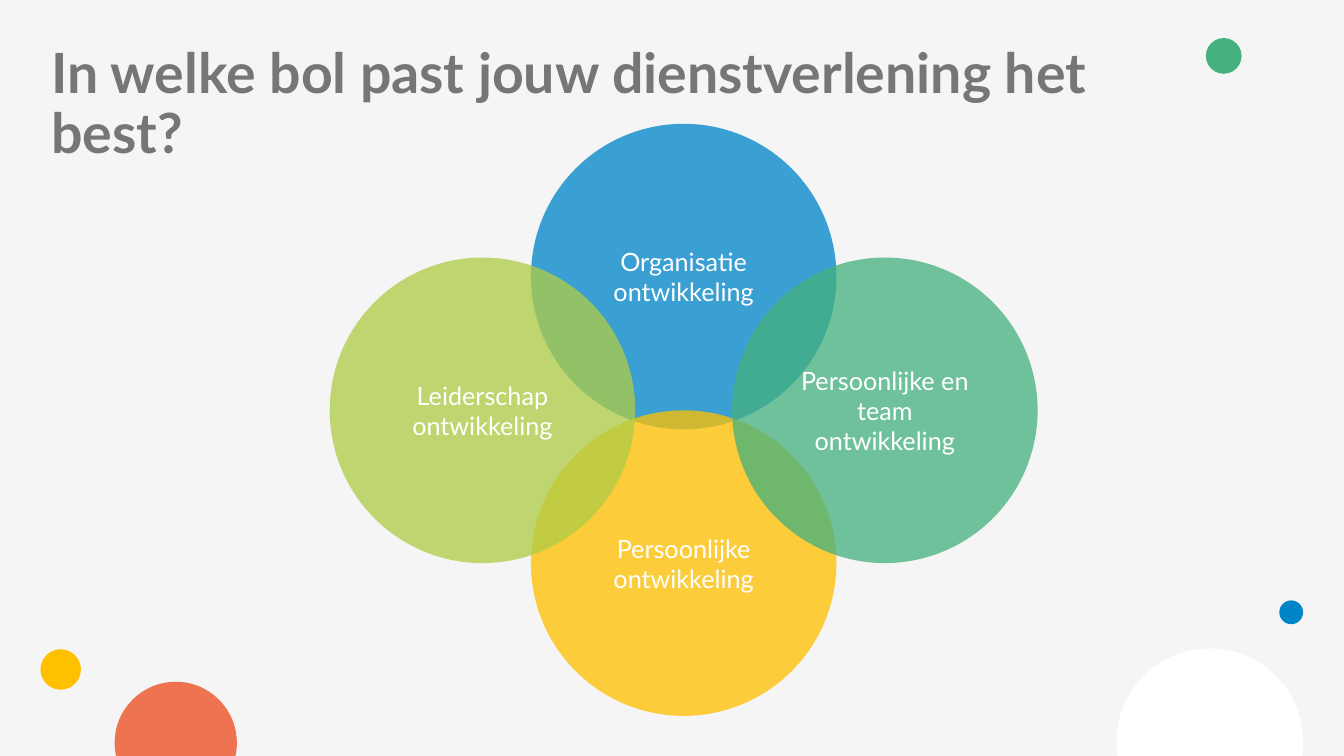
from math import asin, cos, pi, sin, tan

from lxml.etree import SubElement
from pptx import Presentation
from pptx.dml.color import RGBColor
from pptx.enum.shapes import MSO_SHAPE
from pptx.enum.text import MSO_ANCHOR, MSO_AUTO_SIZE, PP_ALIGN
from pptx.oxml.ns import qn
from pptx.util import Cm, Pt

WIDE, HIGH = 33.87, 19.05
BALL = 3.85  # radius of the labelled circles, cm
HEAD = {"name": "Lato", "size": Pt(39.6), "bold": True}
LABEL = {"name": "Lato", "size": Pt(18), "bold": False}

# centre x, centre y, radius, colour
DOTS = [
    (1.53, 16.87, 0.51, "FFC000"),
    (30.84, 1.41, 0.45, "44B17F"),
    (32.54, 15.43, 0.3, "0085C8"),
]
DOMES = [
    (30.49, 18.69, 2.35, "FFFFFF"),
    (4.43, 18.72, 1.54, "EE7351"),
]
# centre x, centre y, colour, label
BALLS = [
    (17.23, 6.97, "0085C8", "Organisatie ontwikkeling"),
    (17.23, 14.19, "FFC000", "Persoonlijke ontwikkeling"),
    (12.16, 10.34, "AFCC46", "Leiderschap ontwikkeling"),
    (22.3, 10.34, "44B17F", "Persoonlijke en team ontwikkeling"),
]


def paint(fill, tint, alpha=100):
    fill.solid()
    fill.fore_color.rgb = RGBColor.from_string(tint)
    if alpha < 100:
        color = fill._xPr.find(qn("a:solidFill"))[0]
        SubElement(color, qn("a:alpha"), val=str(alpha * 1000))


def finish(shape, tint, alpha=100):
    paint(shape.fill, tint, alpha)
    shape.line.fill.background()
    shape.shadow.inherit = False


def write(frame, text, style, tint, align, anchor):
    frame.word_wrap = True
    frame.auto_size = MSO_AUTO_SIZE.NONE
    frame.vertical_anchor = anchor
    para = frame.paragraphs[0]
    para.text = text
    para.alignment = align
    font = para.runs[0].font
    for key, value in style.items():
        setattr(font, key, value)
    font.color.rgb = RGBColor.from_string(tint)
    return para


def add_disc(slide, x, y, r, tint, alpha=100):
    disc = slide.shapes.add_shape(
        MSO_SHAPE.OVAL, Cm(x - r), Cm(y - r), Cm(2 * r), Cm(2 * r))
    finish(disc, tint, alpha)
    return disc


def bend(shape):
    """Turn each three line segments of an outline into one Bézier curve."""
    lines = list(shape._element.iter(qn("a:lnTo")))
    for i in range(0, len(lines), 3):
        curve = lines[i]
        curve.tag = qn("a:cubicBezTo")
        for line in lines[i + 1:i + 3]:
            curve.append(line[0])
            line.getparent().remove(line)


def add_dome(slide, x, y, r, tint):
    """Draw a circle that is cut off flat at the bottom edge of the slide."""
    dip = asin((HIGH - y) / r)
    turns = [dip, 0, -pi / 2, -pi, -pi - dip]

    def spot(turn, pull=0):
        return (Cm(x + r * (cos(turn) - pull * sin(turn))),
                Cm(y + r * (sin(turn) + pull * cos(turn))))

    pen = slide.shapes.build_freeform(*spot(dip))
    for start, end in zip(turns, turns[1:]):
        pull = 4 / 3 * tan((end - start) / 4)
        pen.add_line_segments(
            [spot(start, pull), spot(end, -pull), spot(end)], close=False)
    pen.add_line_segments([], close=True)
    dome = pen.convert_to_shape()
    bend(dome)
    finish(dome, tint)


def add_ball(slide, x, y, tint, text):
    ball = add_disc(slide, x, y, BALL, tint, alpha=76)
    write(ball.text_frame, text, LABEL, "FFFFFF",
          PP_ALIGN.CENTER, MSO_ANCHOR.MIDDLE)


def set_title(slide, text):
    title = slide.shapes.title
    place = {"left": Cm(1.04), "top": Cm(1.02),
             "width": Cm(28.68), "height": Cm(1.75)}
    for key, value in place.items():
        setattr(title, key, value)
    para = write(title.text_frame, text, HEAD, "767676",
                 PP_ALIGN.LEFT, MSO_ANCHOR.TOP)
    para.line_spacing = 0.9
    slide.shapes._spTree.append(title._element)  # in front of the decoration


def main():
    deck = Presentation()
    deck.slide_width, deck.slide_height = Cm(WIDE), Cm(HIGH)
    slide = deck.slides.add_slide(deck.slide_layouts.get_by_name("Title Only"))
    paint(slide.background.fill, "F5F5F5")
    white, coral = DOMES
    add_dome(slide, *white)
    for dot in DOTS:
        add_disc(slide, *dot)
    add_dome(slide, *coral)
    set_title(slide, "In welke bol past jouw dienstverlening het best?")
    for ball in BALLS:
        add_ball(slide, *ball)
    deck.save("out.pptx")


if __name__ == "__main__":
    main()
